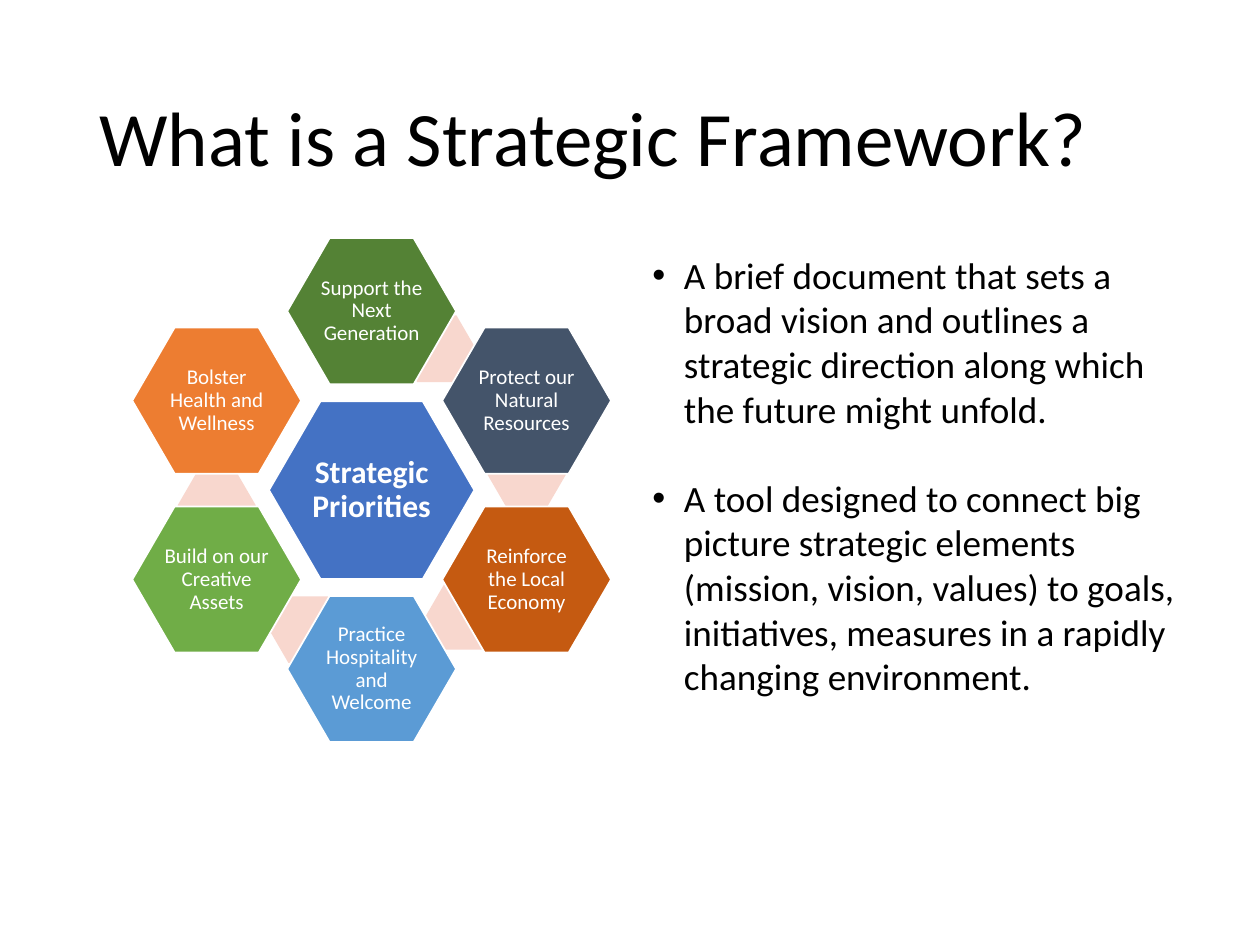
from dataclasses import dataclass

from lxml import etree
from pptx import Presentation
from pptx.dml.color import RGBColor
from pptx.enum.shapes import MSO_SHAPE
from pptx.enum.text import MSO_ANCHOR, PP_ALIGN
from pptx.oxml.ns import qn
from pptx.util import Inches, Pt

HEXAGON = MSO_SHAPE.HEXAGON
MIDDLE, TOP = MSO_ANCHOR.MIDDLE, MSO_ANCHOR.TOP
CENTER, LEFT = PP_ALIGN.CENTER, PP_ALIGN.LEFT


@dataclass(frozen=True)
class Theme:
    font: str = "Calibri"
    text: str = "000000"
    light: str = "FFFFFF"
    core: str = "4472C4"
    link: str = "F8D7CE"
    title_size: float = 44
    body_size: float = 21.2
    body_line: float = 25.5
    core_size: float = 18
    petal_size: float = 12


THEME = Theme()
SLIDE_W, SLIDE_H = 10, 7.5

# Honeycomb grid: columns and rows counted from the core hexagon
CORE_X, CORE_Y = 2.95, 3.89
COL, ROW = 1.23, 0.71
CORE_SIZE, PETAL_SIZE, LINK_SIZE = (1.63, 1.41), (1.34, 1.16), (0.62, 0.53)

PETALS = [
    (0, -2, "548235", "Support the Next Generation"),
    (1, -1, "44546A", "Protect our Natural Resources"),
    (1, 1, "C55A11", "Reinforce the Local Economy"),
    (0, 2, "5B9BD5", "Practice Hospitality and Welcome"),
    (-1, 1, "70AD47", "Build on our Creative Assets"),
    (-1, -1, "ED7D31", "Bolster Health and Wellness"),
]
LINKS = [(0.42, -1.58), (1, -0.17), (0.6, 1.41), (-0.41, 1.56), (-1, 0.17)]

POINTS = [
    "A brief document that sets a broad vision and outlines a strategic "
    "direction along which the future might unfold.",
    "A tool designed to connect big picture strategic elements (mission, "
    "vision, values) to goals, initiatives, measures in a rapidly changing "
    "environment.",
]


def style(p, size, color, align=LEFT, bold=False, spacing=0.9):
    p.alignment = align
    p.line_spacing = spacing
    for r in p.runs:
        r.font.name = THEME.font
        r.font.size = Pt(size)
        r.font.bold = bold
        r.font.color.rgb = RGBColor.from_string(color)


def add_text(slide, x, y, w, h, anchor):
    """Add a wrapping text box placed by shares of the slide."""
    sp = slide.shapes.add_textbox(
        Inches(x * SLIDE_W), Inches(y * SLIDE_H),
        Inches(w * SLIDE_W), Inches(h * SLIDE_H))
    tf = sp.text_frame
    tf.word_wrap = True
    tf.vertical_anchor = anchor
    return tf


def add_bullet(p):
    pPr = p._p.get_or_add_pPr()
    pPr.set("marL", str(Inches(0.25)))
    pPr.set("indent", str(-Inches(0.25)))
    etree.SubElement(pPr, qn("a:buFont")).set("typeface", "Arial")
    etree.SubElement(pPr, qn("a:buChar")).set("char", "•")


def add_hexagon(slide, col, row, size, fill, outlined=True):
    """Add a hexagon centred on a honeycomb cell."""
    w, h = size
    sp = slide.shapes.add_shape(
        HEXAGON, Inches(CORE_X + col * COL - w / 2),
        Inches(CORE_Y + row * ROW - h / 2), Inches(w), Inches(h))
    sp.adjustments[0] = 0.29
    sp.shadow.inherit = False
    sp.fill.solid()
    sp.fill.fore_color.rgb = RGBColor.from_string(fill)
    if outlined:
        sp.line.color.rgb = RGBColor.from_string(THEME.light)
        sp.line.width = Pt(1)
    else:
        sp.line.fill.background()
    return sp


def add_label(sp, text, size, bold=False):
    tf = sp.text_frame
    tf.word_wrap = True
    tf.vertical_anchor = MIDDLE
    tf.margin_left = tf.margin_right = Inches(0.02)
    tf.margin_top = tf.margin_bottom = Inches(0.02)
    tf.text = text
    style(tf.paragraphs[0], size, THEME.light, CENTER, bold)


def add_title(slide, text):
    tf = add_text(slide, 0.069, 0.053, 0.862, 0.193, MIDDLE)
    tf.text = text
    style(tf.paragraphs[0], THEME.title_size, THEME.text)


def add_points(slide, points):
    tf = add_text(slide, 0.508, 0.26, 0.442, 0.628, TOP)
    for i, text in enumerate(points):
        p = tf.add_paragraph() if i else tf.paragraphs[0]
        p.text = text
        add_bullet(p)
        style(p, THEME.body_size, THEME.text, spacing=Pt(THEME.body_line))
        if i:
            p.space_before = Pt(THEME.body_line)


def add_honeycomb(slide):
    # Pale links lie behind the petals
    for col, row in LINKS:
        add_hexagon(slide, col, row, LINK_SIZE, THEME.link, outlined=False)
    # Core
    core = add_hexagon(slide, 0, 0, CORE_SIZE, THEME.core)
    add_label(core, "Strategic Priorities", THEME.core_size, bold=True)
    # Petals
    for col, row, fill, text in PETALS:
        petal = add_hexagon(slide, col, row, PETAL_SIZE, fill)
        add_label(petal, text, THEME.petal_size)


def main():
    prs = Presentation()
    prs.slide_width, prs.slide_height = Inches(SLIDE_W), Inches(SLIDE_H)
    slide = prs.slides.add_slide(prs.slide_layouts[6])
    add_points(slide, POINTS)
    add_title(slide, "What is a Strategic Framework?")
    add_honeycomb(slide)
    prs.save("out.pptx")


if __name__ == "__main__":
    main()
